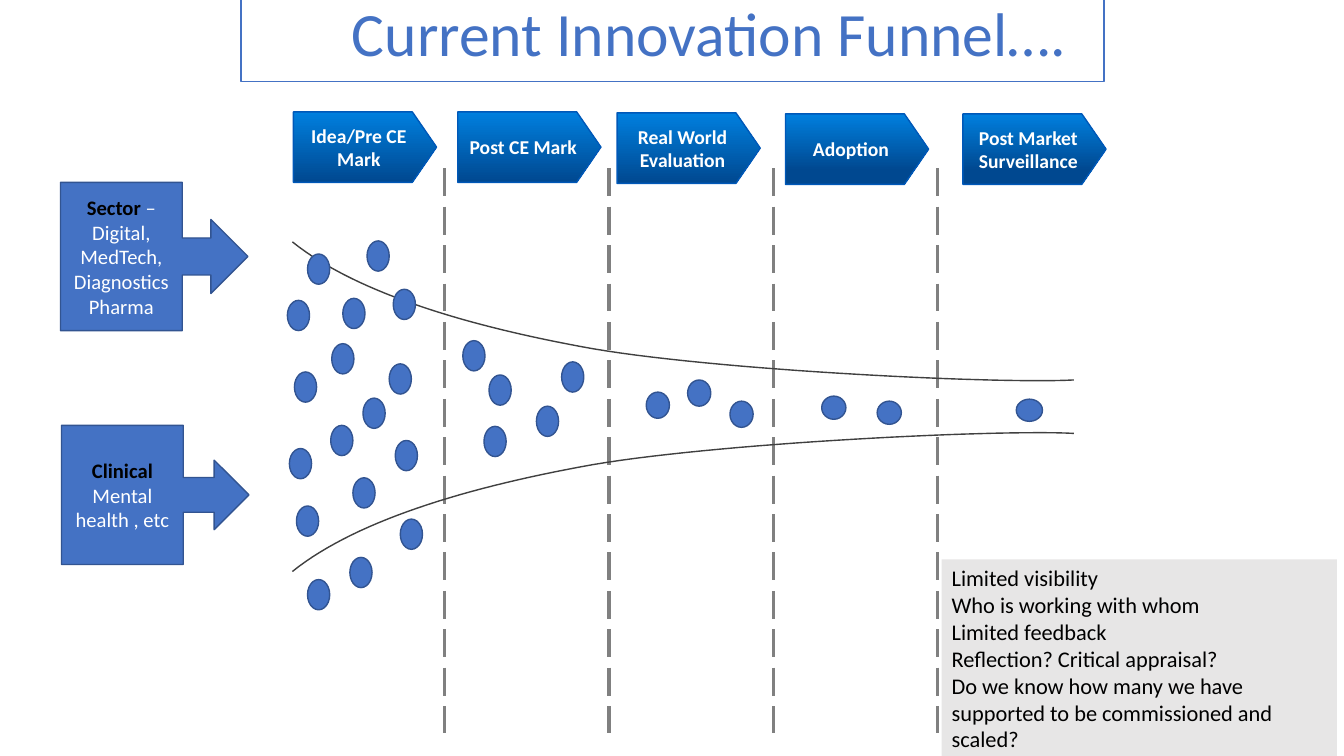
import pptx
import pptx.util
import pptx.dml.color
import pptx.enum.dml
import pptx.enum.shapes
import pptx.enum.text
import pptx.oxml
from dataclasses import dataclass

SHAPE = pptx.enum.shapes.MSO_SHAPE
ALIGN = pptx.enum.text.PP_ALIGN
ANCHOR = pptx.enum.text.MSO_ANCHOR


@dataclass(frozen=True)
class Theme:
    font: str = "Calibri"
    blue: str = "4472C4"
    outline: str = "325491"
    stage_top: str = "007FDE"
    stage_bottom: str = "004890"
    stage_line: str = "0058B8"
    curve: str = "404040"
    divider: str = "808080"
    note: str = "E7E6E6"
    black: str = "000000"
    white: str = "FFFFFF"
    title_size: float = 44
    stage_size: float = 14
    callout_size: float = 14.7
    note_size: float = 16


T = Theme()

# The grid has ten cells to the inch; every box is left, top, width, height in cells.
SLIDE = (133.3, 75)
TITLE = (23.9, -0.9, 85.6, 9)
FUNNEL = (27.8, 24, 81.5, 32.7)
DIVIDERS = (27.8, 16.7, 81.5, 56)
STAGES = (27.8, 11.1, 81.5, 7)
SECTOR = (6, 18.1, 18.6, 14.7)
CLINICAL = (6.1, 42.2, 18.6, 13.8)
NOTE = (93.4, 55.5, 39.2, 19.9)

# Label, offset from column left, offset from row top, end of the gradient
STAGE_LABELS = [
    ("Idea/Pre CE Mark", 1.3, 0, 1),
    ("Post CE Mark", 1.3, 0, 1),
    ("Real World Evaluation", 0.8, 0.1, 1),
    ("Adoption", 1.2, 0.2, 0.8),
    ("Post Market\nSurveillance", 2.5, 0.2, 0.8),
]
# Dot size and dot positions, from the left of each stage and the top of the funnel
IDEAS = [
    ((2.2, 3), [(8.6, -0.1), (2.7, 1.2), (11.2, 4.7), (6.2, 5.6), (0.7, 5.8),
                (5.1, 10.1), (10.8, 12.1), (1.4, 12.9), (8.2, 15.5), (5, 18.2),
                (11.4, 19.7), (0.9, 20.5), (7.2, 23.4), (1.6, 26.2), (11.9, 27.5),
                (6.9, 31.3), (2.7, 33.5)]),
    ((2.2, 3), [(1.8, 9.8), (11.6, 11.9), (4.4, 13.2), (9.1, 16.3), (3.9, 18.3)]),
    ((2.3, 2.6), [(7.8, 13.7), (3.7, 14.9), (12, 15.8)]),
    ((2.4, 2.3), [(4.8, 15.3), (10.3, 15.8)]),
    ((2.6, 2.2), [(7.8, 15.6)]),
]
# Bezier control points of the upper edge; the lower edge mirrors it
EDGE = [
    [(78.7, 13.7), (71.4, 14.1), (43.9, 12.8), (31, 10.6)],
    [(31, 10.6), (18.1, 8.3), (7.3, 4.9), (1.2, 0)],
]
CONCERNS = [
    "Limited visibility",
    "Who is working with whom",
    "Limited feedback",
    "Reflection? Critical appraisal?",
    "Do we know how many we have supported to be commissioned and scaled?",
]


def cells(n):
    return pptx.util.Inches(n / 10)


def rgb(value):
    return pptx.dml.color.RGBColor.from_string(value)


def column_left(box, i):
    return box[0] + i * box[2] / len(STAGE_LABELS)


def add_shape(s, kind, box, fill, line=None):
    sp = s.shapes.add_shape(kind, *map(cells, box))
    sp.shadow.inherit = False
    sp.fill.solid()
    sp.fill.fore_color.rgb = rgb(fill)
    if line:
        sp.line.color.rgb = rgb(line)
        sp.line.width = pptx.util.Pt(1)
    else:
        sp.line.fill.background()
    return sp


def write(sp, paragraphs, size, color, align=ALIGN.LEFT, anchor=ANCHOR.MIDDLE, bold=False):
    tf = sp.text_frame
    tf.word_wrap = True
    tf.vertical_anchor = anchor
    for i, text in enumerate(paragraphs):
        p = tf.add_paragraph() if i else tf.paragraphs[0]
        p.alignment = align
        p.font.name, p.font.size, p.font.bold = T.font, pptx.util.Pt(size), bold
        p.font.color.rgb = rgb(color)
        p.add_run().text = text
    return tf


def add_title(s, box):
    sp = add_shape(s, SHAPE.RECTANGLE, box, T.white, T.blue)
    tf = write(sp, ["Current Innovation Funnel…."], T.title_size, T.blue)
    tf.margin_left = cells(11)
    tf.paragraphs[0].line_spacing = 0.9


def add_dividers(s, box):
    for i in range(1, len(STAGE_LABELS)):
        x = cells(column_left(box, i))
        c = s.shapes.add_connector(pptx.enum.shapes.MSO_CONNECTOR.STRAIGHT,
                                   x, cells(box[1]), x, cells(box[1] + box[3]))
        c.line.color.rgb = rgb(T.divider)
        c.line.width = pptx.util.Pt(2.5)
        c.line.dash_style = pptx.enum.dml.MSO_LINE.LONG_DASH
        c._element.spPr.append(pptx.oxml.parse_xml(
            '<a:effectLst xmlns:a="http://schemas.openxmlformats.org/drawingml/2006/main"/>'))


def add_stages(s, box):
    for i, (label, dx, dy, end) in enumerate(STAGE_LABELS):
        place = (column_left(box, i) + dx, box[1] + dy, 14.2, box[3])
        sp = add_shape(s, SHAPE.PENTAGON, place, T.stage_top, T.stage_line)
        sp.adjustments[0] = 0.344
        sp.fill.gradient()
        sp.fill.gradient_angle = 270
        for stop, color, at in zip(sp.fill.gradient_stops, (T.stage_top, T.stage_bottom), (0, end)):
            stop.color.rgb = rgb(color)
            stop.position = at
        write(sp, label.split("\n"), T.stage_size, T.white, ALIGN.CENTER, bold=True)


def bezier(points, steps=30):
    for k in range(steps + 1):
        t = k / steps
        weights = ((1 - t) ** 3, 3 * t * (1 - t) ** 2, 3 * t * t * (1 - t), t ** 3)
        yield tuple(sum(w * pt[axis] for w, pt in zip(weights, points)) for axis in (0, 1))


def add_funnel(s, box):
    left, top, _, height = box
    edge = [pt for part in EDGE for pt in bezier(part)]
    for mirrored in (False, True):
        pts = [(cells(left + x), cells(top + (height - y if mirrored else y))) for x, y in edge]
        builder = s.shapes.build_freeform(*pts[0])
        builder.add_line_segments(pts[1:], close=False)
        sp = builder.convert_to_shape()
        sp.shadow.inherit = False
        sp.fill.background()
        sp.line.color.rgb = rgb(T.curve)
        sp.line.width = pptx.util.Pt(1)
    for i, (size, dots) in enumerate(IDEAS):
        for dx, dy in dots:
            place = (column_left(box, i) + dx, top + dy, *size)
            add_shape(s, SHAPE.FLOWCHART_CONNECTOR, place, T.blue, T.outline)


def add_callout(s, box, heading, rest):
    sp = add_shape(s, SHAPE.RIGHT_ARROW_CALLOUT, box, T.blue, T.outline)
    p = write(sp, [heading], T.callout_size, T.white, ALIGN.CENTER).paragraphs[0]
    p.runs[0].font.bold = True
    p.runs[0].font.color.rgb = rgb(T.black)
    p.add_run().text = rest


def add_note(s, box):
    sp = add_shape(s, SHAPE.RECTANGLE, box, T.note)
    write(sp, CONCERNS, T.note_size, T.black, anchor=ANCHOR.TOP)


def main():
    prs = pptx.Presentation()
    prs.slide_width, prs.slide_height = map(cells, SLIDE)
    s = prs.slides.add_slide(prs.slide_layouts[6])
    add_dividers(s, DIVIDERS)
    add_title(s, TITLE)
    add_stages(s, STAGES)
    add_callout(s, SECTOR, "Sector", " – Digital, MedTech, Diagnostics Pharma")
    add_callout(s, CLINICAL, "Clinical", " Mental health , etc")
    add_funnel(s, FUNNEL)
    add_note(s, NOTE)
    prs.save("out.pptx")


if __name__ == "__main__":
    main()
